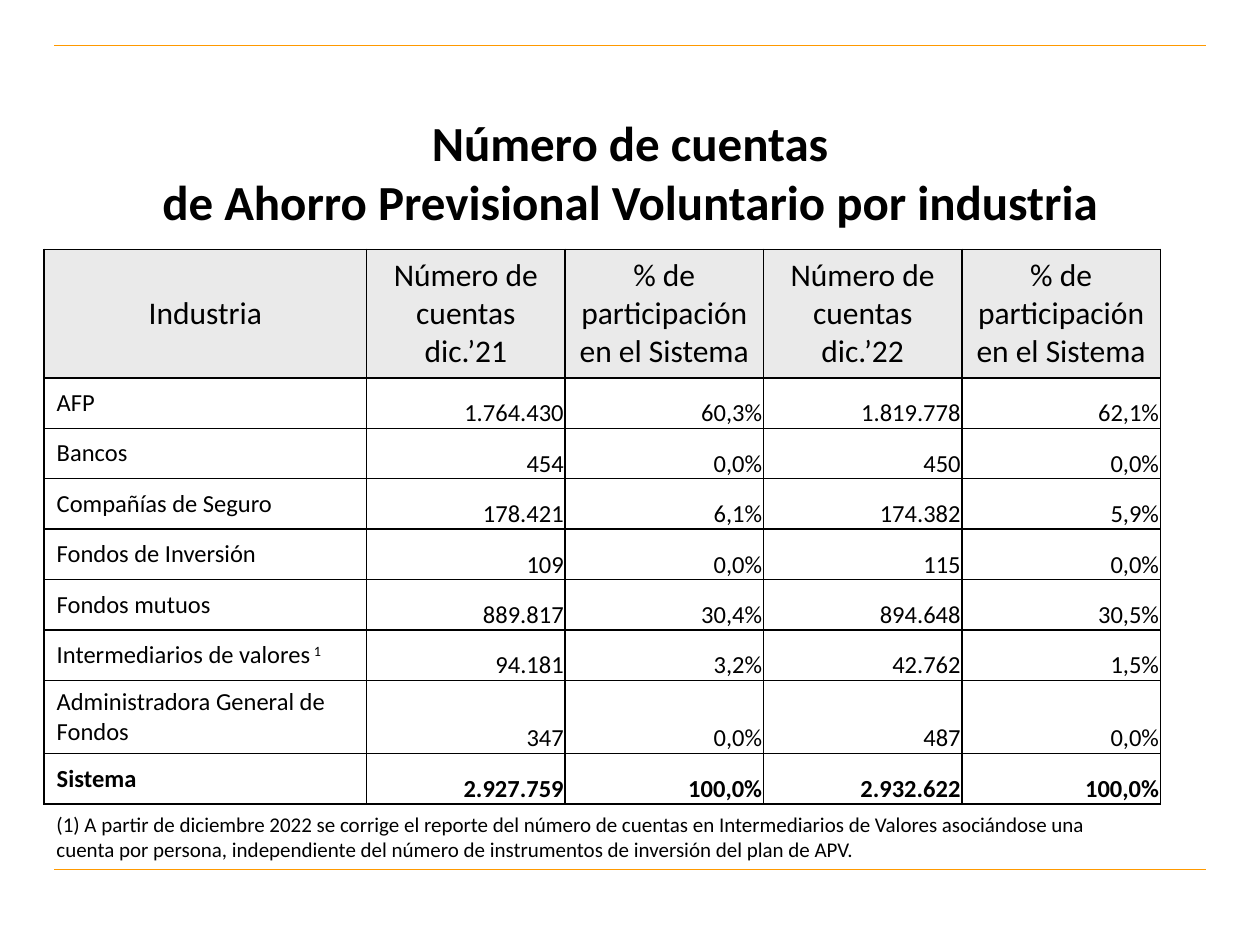
from lxml import etree
from pptx import Presentation
from pptx import util as u
from pptx.dml.color import RGBColor
from pptx.enum import shapes, text
from pptx.oxml.ns import qn

COLORS = {"text": "000000", "border": "000000", "header": "EAEAEA",
          "cell": "FFFFFF", "rule": "FF9900"}
FONT = "Calibri"
WIDTH, HEIGHT = u.Inches(10), u.Inches(7.5)
LEFT, CONTENT_WIDTH = u.Inches(0.35), u.Inches(8.86)
FIRST_COLUMN = u.Inches(2.56)
HEADER_ROW, BODY_ROW, TALL_ROW = u.Inches(1.02), u.Inches(0.4), u.Inches(0.58)

TITLE = "Número de cuentas\vde Ahorro Previsional Voluntario por industria"
SHARE = "% de participación en el Sistema"
HEADERS = ["Industria", "Número de cuentas\ndic.’21", SHARE,
           "Número de cuentas\ndic.’22", SHARE]
ROWS = [
    ["AFP", "1.764.430", "60,3%", "1.819.778", "62,1%"],
    ["Bancos", "454", "0,0%", "450", "0,0%"],
    ["Compañías de Seguro", "178.421", "6,1%", "174.382", "5,9%"],
    ["Fondos de Inversión", "109", "0,0%", "115", "0,0%"],
    ["Fondos mutuos", "889.817", "30,4%", "894.648", "30,5%"],
    ["Intermediarios de valores", "94.181", "3,2%", "42.762", "1,5%"],
    ["Administradora General de Fondos", "347", "0,0%", "487", "0,0%"],
    ["Sistema", "2.927.759", "100,0%", "2.932.622", "100,0%"],
]
NOTED_ROW, TWO_LINE_ROW = 6, 7
FOOTNOTE = ("(1) A partir de diciembre 2022 se corrige el reporte del número de "
            "cuentas en Intermediarios de Valores asociándose una cuenta por "
            "persona, independiente del número de instrumentos de inversión "
            "del plan de APV.")


def rgb(name):
    return RGBColor.from_string(COLORS[name])


def format_text(frame, size, align, bold=False):
    for paragraph in frame.paragraphs:
        paragraph.alignment = align
        font = paragraph.font
        font.name, font.size, font.bold = FONT, u.Pt(size), bold
        font.color.rgb = rgb("text")


def add_rule(slide, y):
    left, right = round(WIDTH * 0.043), round(WIDTH * 0.957)
    rule = slide.shapes.add_connector(shapes.MSO_CONNECTOR.STRAIGHT, left, y, right, y)
    rule.line.color.rgb = rgb("rule")
    rule.line.width = u.Pt(0.75)
    etree.SubElement(rule._element.spPr, qn("a:effectLst"))


def set_title(slide):
    title = slide.shapes.title
    title.left, title.top = u.Inches(0.5), u.Inches(0.99)
    title.width, title.height = u.Inches(9), u.Inches(1.02)
    frame = title.text_frame
    frame.text = TITLE
    frame.auto_size = text.MSO_AUTO_SIZE.NONE
    frame.vertical_anchor = text.MSO_ANCHOR.MIDDLE
    frame.margin_top, frame.margin_bottom = 0, u.Inches(0.28)
    format_text(frame, 28, text.PP_ALIGN.CENTER, True)


def add_borders(cell):
    properties = cell._tc.get_or_add_tcPr()
    for side in ("lnL", "lnR", "lnT", "lnB"):
        line = etree.SubElement(properties, qn(f"a:{side}"), w=str(u.Pt(1)))
        fill = etree.SubElement(line, qn("a:solidFill"))
        etree.SubElement(fill, qn("a:srgbClr"), val=COLORS["border"])


def set_margins(cell, left, top, right, bottom):
    cell.margin_left, cell.margin_top = u.Inches(left), u.Inches(top)
    cell.margin_right, cell.margin_bottom = u.Inches(right), u.Inches(bottom)


def fill_cell(cell, value, row, column):
    """Headers are centred, labels sit left, figures bottom right."""
    cell.text = value
    add_borders(cell)
    if row and column in (2, 4):
        cell.fill.background()
    else:
        cell.fill.solid()
        cell.fill.fore_color.rgb = rgb("cell" if row else "header")
    if row and column:
        cell.vertical_anchor = text.MSO_ANCHOR.BOTTOM
        set_margins(cell, 0.01, 0.01, 0.01, 0)
        align = text.PP_ALIGN.RIGHT
    else:
        cell.vertical_anchor = text.MSO_ANCHOR.MIDDLE
        set_margins(cell, 0.1, 0.05, 0.1, 0.05)
        align = text.PP_ALIGN.LEFT if row else text.PP_ALIGN.CENTER
    format_text(cell.text_frame, 14 if row else 18, align, row == len(ROWS))


def add_superscript(cell, mark):
    run = cell.text_frame.paragraphs[0].add_run()
    run.text = mark
    run._r.get_or_add_rPr().set("baseline", "30000")


def add_accounts_table(slide):
    content = [HEADERS] + ROWS
    frame = slide.shapes.add_table(len(content), len(HEADERS), LEFT, u.Inches(1.98),
                                   CONTENT_WIDTH, u.Inches(4.4))
    table = frame.table
    table.first_row = table.horz_banding = False
    figure_width = (CONTENT_WIDTH - FIRST_COLUMN) // (len(HEADERS) - 1)
    for index, column in enumerate(table.columns):
        column.width = figure_width if index else FIRST_COLUMN
    heights = {0: HEADER_ROW, TWO_LINE_ROW: TALL_ROW}
    for row, values in enumerate(content):
        table.rows[row].height = heights.get(row, BODY_ROW)
        for column, value in enumerate(values):
            fill_cell(table.cell(row, column), value, row, column)
    add_superscript(table.cell(NOTED_ROW, 0), " 1")


def add_footnote(slide):
    box = slide.shapes.add_textbox(LEFT, u.Inches(6.39), CONTENT_WIDTH, u.Inches(0.5))
    frame = box.text_frame
    frame.word_wrap = True
    frame.auto_size = text.MSO_AUTO_SIZE.SHAPE_TO_FIT_TEXT
    frame.text = FOOTNOTE
    format_text(frame, 12, text.PP_ALIGN.LEFT)


def main():
    presentation = Presentation()
    presentation.slide_width, presentation.slide_height = WIDTH, HEIGHT
    slide = presentation.slides.add_slide(presentation.slide_layouts[5])
    for y in (0.36, 6.9):
        add_rule(slide, u.Inches(y))
    set_title(slide)
    add_accounts_table(slide)
    add_footnote(slide)
    presentation.save("out.pptx")


if __name__ == "__main__":
    main()
